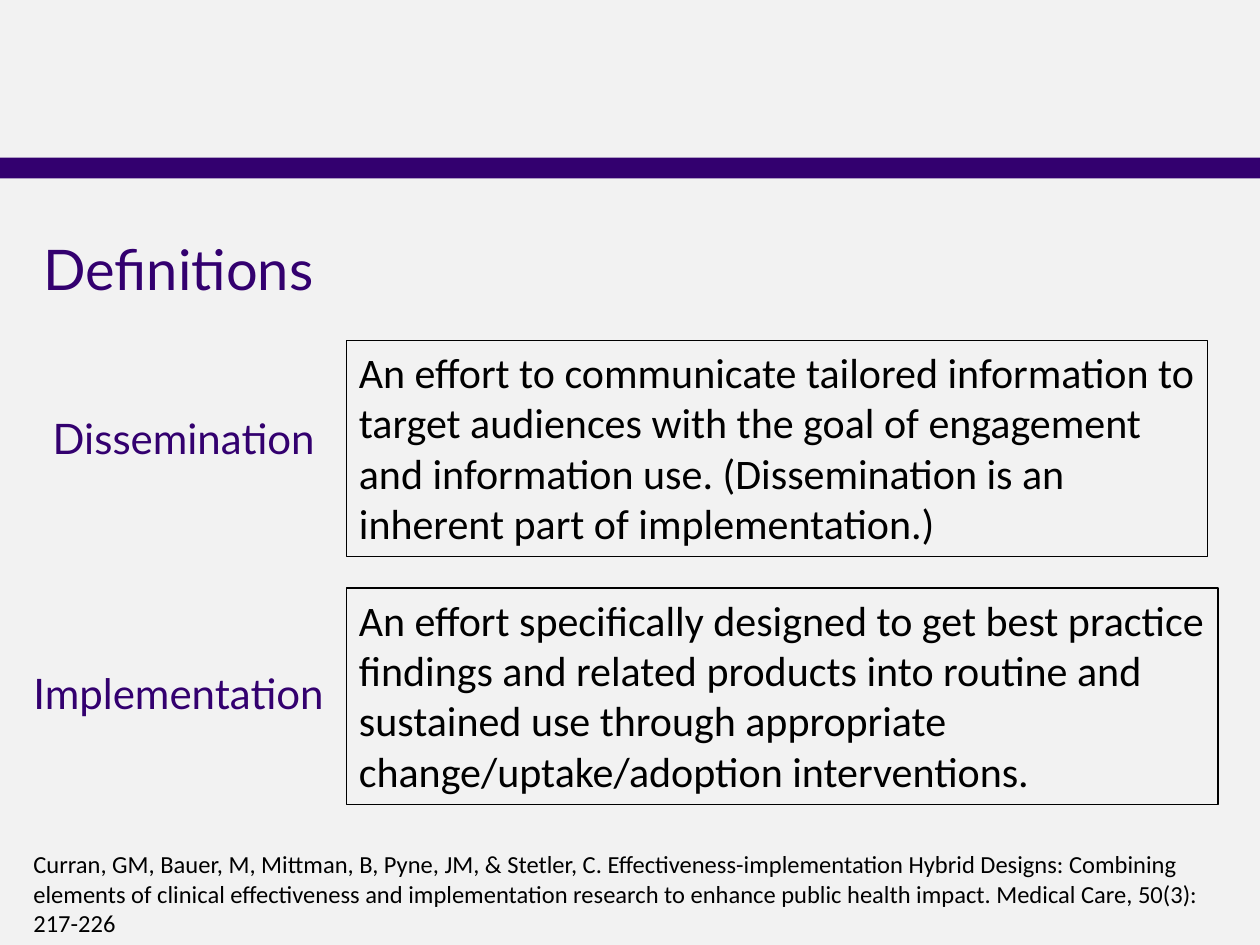
"""Build the definitions slide on a grid of 120 columns by 90 rows."""
import pptx
import pptx.dml.color
import pptx.enum.shapes
import pptx.enum.text
import pptx.util

RGBColor = pptx.dml.color.RGBColor
PURPLE = RGBColor(0x33, 0x00, 0x6F)
BLACK = RGBColor(0x00, 0x00, 0x00)
PALE_GRAY = RGBColor(0xF2, 0xF2, 0xF2)

WIDTH, HEIGHT = pptx.util.Inches(10), pptx.util.Inches(7.5)
COLUMNS, ROWS = 120, 90
DEFINITION_COLUMN, DEFINITION_ROWS = 33, 20.6

ALIGN = pptx.enum.text.PP_ALIGN
ANCHOR = pptx.enum.text.MSO_ANCHOR
HEADING = {"name": "Lato", "color": PURPLE, "align": ALIGN.CENTER, "anchor": ANCHOR.MIDDLE}
BODY = {"name": "Calibri", "color": BLACK, "align": ALIGN.LEFT, "anchor": ANCHOR.TOP}

DEFINITIONS = [
    ("Dissemination", (3, 37, 29, 9.4), 32.4, 82,
     "An effort to communicate tailored information to target audiences with the goal of "
     "engagement and information use. (Dissemination is an inherent part of implementation.)"),
    ("Implementation", (1, 61, 32, 10), 56, 83,
     "An effort specifically designed to get best practice findings and related products into "
     "routine and sustained use through appropriate change/uptake/adoption interventions."),
]
CITATION = (
    "Curran, GM, Bauer, M, Mittman, B, Pyne, JM, & Stetler, C. Effectiveness-implementation "
    "Hybrid Designs: Combining elements of clinical effectiveness and implementation research "
    "to enhance public health impact. Medical Care, 50(3): 217-226"
)


def place(column, row, columns, rows):
    """Turn grid units into left, top, width and height."""
    return (round(WIDTH * column / COLUMNS), round(HEIGHT * row / ROWS),
            round(WIDTH * columns / COLUMNS), round(HEIGHT * rows / ROWS))


def add_band(page, cells):
    """Draw a solid purple band."""
    band = page.shapes.add_shape(pptx.enum.shapes.MSO_SHAPE.RECTANGLE, *place(*cells))
    band.shadow.inherit = False
    band.fill.solid()
    band.fill.fore_color.rgb = PURPLE
    band.line.fill.background()


def add_text(page, cells, text, size, style):
    """Add a wrapped text box in the given style and return it."""
    box = page.shapes.add_textbox(*place(*cells))
    frame = box.text_frame
    frame.word_wrap = True
    frame.vertical_anchor = style["anchor"]
    para = frame.paragraphs[0]
    para.alignment = style["align"]
    span = para.add_run()
    span.text = text
    for key, value in {"name": style["name"], "size": pptx.util.Pt(size)}.items():
        setattr(span.font, key, value)
    span.font.color.rgb = style["color"]
    return box


def add_definition(page, term, term_cells, row, columns, meaning):
    """Add a term and its outlined meaning."""
    add_text(page, term_cells, term, 24, HEADING)
    cells = (DEFINITION_COLUMN, row, columns, DEFINITION_ROWS)
    box = add_text(page, cells, meaning, 24, BODY)
    box.line.color.rgb = BLACK
    box.line.width = pptx.util.Pt(0.75)


def main():
    """Build and save the deck."""
    deck = pptx.Presentation()
    deck.slide_width, deck.slide_height = WIDTH, HEIGHT
    page = deck.slides.add_slide(deck.slide_layouts[6])
    page.background.fill.solid()
    page.background.fill.fore_color.rgb = PALE_GRAY
    add_band(page, (0, 15, COLUMNS, 2))
    add_text(page, (-1, 21, 36, 9), "Definitions", 32, HEADING)
    for definition in DEFINITIONS:
        add_definition(page, *definition)
    add_text(page, (2, 80.3, 116, 9.7), CITATION, 14, BODY)
    deck.save("out.pptx")


if __name__ == "__main__":
    main()
